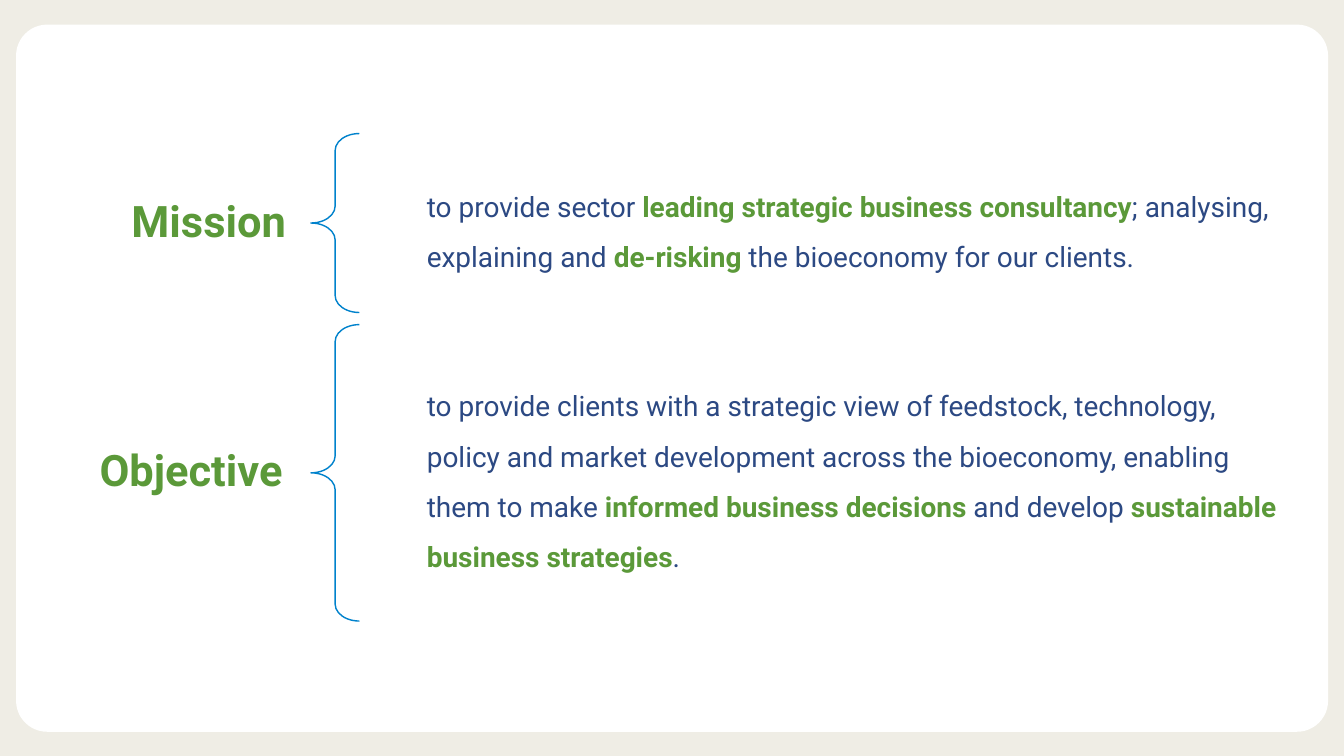
from pptx import Presentation
from pptx.dml.color import RGBColor
from pptx.enum.shapes import MSO_SHAPE
from pptx.enum.text import MSO_ANCHOR, PP_ALIGN
from pptx.util import Cm, Pt

ROUNDED = MSO_SHAPE.ROUNDED_RECTANGLE
BRACE = MSO_SHAPE.LEFT_BRACE
MIDDLE = MSO_ANCHOR.MIDDLE
LEFT, RIGHT = PP_ALIGN.LEFT, PP_ALIGN.RIGHT

FONT = "Roboto"
COLOURS = {
    "background": "EFEDE5",
    "panel": "FFFFFF",
    "brace": "0082CC",
    "text": "2C4983",
    "emphasis": "5B9939",
}

# Shared geometry, in centimetres
LABEL_HEIGHT = 3.5
BRACE_LEFT, BRACE_WIDTH = 15.67, 2.44
BODY_LEFT, BODY_WIDTH = 19.08, 46.38
BODY_INDENT = 2.0

# Each statement: label, label left and width, top, height, (text, emphasised) parts
STATEMENTS = [
    ("Mission", 3.45, 12.19, 6.73, 9.02, [
        ("to provide sector ", False),
        ("leading strategic business consultancy", True),
        ("; analysing, explaining and ", False),
        ("de-risking", True),
        (" the bioeconomy for our clients.", False),
    ]),
    ("Objective", 1.8, 13.67, 16.36, 14.94, [
        ("to provide clients with a strategic view of feedstock, technology, "
         "policy and market development across the bioeconomy, enabling "
         "them to make ", False),
        ("informed business decisions ", True),
        ("and develop ", False),
        ("sustainable business strategies", True),
        (".", False),
    ]),
]


def colour(name):
    return RGBColor.from_string(COLOURS[name])


def add_panel(slide):
    shape = slide.shapes.add_shape(ROUNDED, Cm(0.81), Cm(1.24), Cm(66.12), Cm(35.64))
    shape.adjustments[0] = 0.044
    shape.shadow.inherit = False
    shape.fill.solid()
    shape.fill.fore_color.rgb = colour("panel")
    shape.line.fill.background()


def add_brace(slide, top, height):
    shape = slide.shapes.add_shape(
        BRACE, Cm(BRACE_LEFT), Cm(top), Cm(BRACE_WIDTH), Cm(height))
    shape.adjustments[0] = 0.35
    shape.adjustments[1] = 0.5
    shape.shadow.inherit = False
    shape.fill.background()
    shape.line.color.rgb = colour("brace")
    shape.line.width = Pt(2)


def add_text(slide, box, parts, size, side_inset, alignment, line_spacing):
    """Add a one-paragraph text box and return its paragraph."""
    text_frame = slide.shapes.add_textbox(*map(Cm, box)).text_frame
    text_frame.word_wrap = True
    text_frame.vertical_anchor = MIDDLE
    text_frame.margin_left = text_frame.margin_right = Cm(side_inset)
    text_frame.margin_top = text_frame.margin_bottom = Cm(0.43)
    paragraph = text_frame.paragraphs[0]
    paragraph.alignment = alignment
    paragraph.line_spacing = line_spacing
    for text, emphasised in parts:
        run = paragraph.add_run()
        run.text = text
        run.font.name = FONT
        run.font.size = Pt(size)
        run.font.bold = emphasised
        run.font.color.rgb = colour("emphasis" if emphasised else "text")
    return paragraph


def add_statement(slide, label, label_left, label_width, top, height, parts):
    # The label is centred on the tip of its brace
    label_top = top + (height - LABEL_HEIGHT) / 2
    add_text(slide, (label_left, label_top, label_width, LABEL_HEIGHT),
             [(label, True)], 62, 1.22, RIGHT, 0.9)
    add_brace(slide, top, height)
    body = add_text(slide, (BODY_LEFT, top, BODY_WIDTH, height),
                    parts, 40, 0.43, LEFT, 1.5)
    properties = body._p.get_or_add_pPr()
    properties.set("marL", str(Cm(BODY_INDENT)))
    properties.set("indent", "0")


def main():
    presentation = Presentation()
    presentation.slide_width, presentation.slide_height = Cm(67.73), Cm(38.1)
    slide = presentation.slides.add_slide(presentation.slide_layouts[6])

    # Background and white panel
    slide.background.fill.solid()
    slide.background.fill.fore_color.rgb = colour("background")
    add_panel(slide)

    # Mission and objective
    for statement in STATEMENTS:
        add_statement(slide, *statement)

    presentation.save("out.pptx")


if __name__ == "__main__":
    main()
